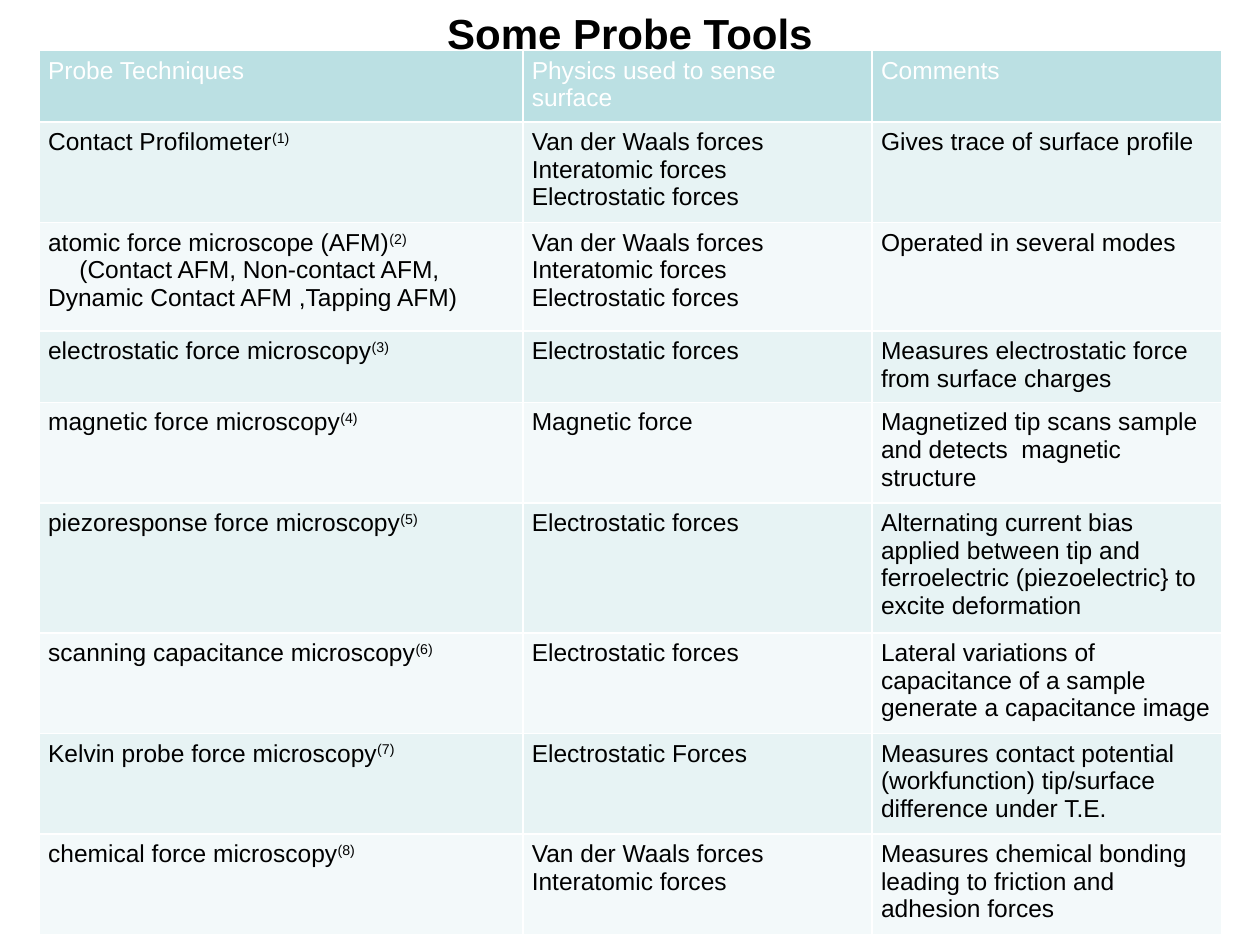
from pptx import Presentation
from pptx import util as u
from pptx.dml.color import RGBColor
from pptx.enum import text

COLORS = {"header": "BBE0E3", "odd": "E7F3F4", "even": "F3F9FA",
          "white": "FFFFFF", "black": "000000"}


def add_text(p, content, size=14, color="black", bold=False, superscript=False):
    r = p.add_run()
    r.text = content
    r.font.name = "Arial"
    r.font.size = u.Pt(size)
    r.font.bold = bold
    r.font.color.rgb = RGBColor.from_string(COLORS[color])
    if superscript:
        r._r.get_or_add_rPr().set("baseline", "30000")


prs = Presentation()
prs.slide_width, prs.slide_height = u.Cm(25.4), u.Cm(19.05)
s = prs.slides.add_slide(prs.slide_layouts[5])

# Title
sp = s.shapes.title
sp.left, sp.top, sp.width, sp.height = u.Cm(0), u.Cm(0), u.Cm(25.4), u.Cm(1.3)
tf = sp.text_frame
tf.auto_size = text.MSO_AUTO_SIZE.NONE
tf.vertical_anchor = text.MSO_ANCHOR.MIDDLE
p = tf.paragraphs[0]
p.alignment = text.PP_ALIGN.CENTER
add_text(p, "Some Probe Tools", size=24, bold=True)

# Table content: technique, physics, comment; each line is a paragraph
headers = ("Probe Techniques", "Physics used to sense surface", "Comments")
all_forces = "Van der Waals forces\nInteratomic forces\nElectrostatic forces"
tools = [
    ("Contact Profilometer", all_forces, "Gives trace of surface profile"),
    ("atomic force microscope (AFM)", all_forces, "Operated in several modes"),
    ("electrostatic force microscopy", "Electrostatic forces",
     "Measures electrostatic force from surface charges"),
    ("magnetic force microscopy", "Magnetic force",
     "Magnetized tip scans sample and detects  magnetic structure"),
    ("piezoresponse force microscopy", "Electrostatic forces",
     "Alternating current bias applied between tip and ferroelectric "
     "(piezoelectric} to excite deformation"),
    ("scanning capacitance microscopy", "Electrostatic forces",
     "Lateral variations of capacitance of a sample generate a capacitance image"),
    ("Kelvin probe force microscopy", "Electrostatic Forces",
     "Measures contact potential (workfunction) tip/surface difference under T.E."),
    ("chemical force microscopy", "Van der Waals forces\nInteratomic forces",
     "Measures chemical bonding leading to friction and adhesion forces"),
]
afm_modes = "(Contact AFM, Non-contact AFM, Dynamic Contact AFM ,Tapping AFM)"

# Table grid
widths = (9.75, 7.04, 7.04)
heights = (1.44, 2.03, 2.18, 1.44, 2.03, 2.62, 2.03, 2.03, 2.03)
table = s.shapes.add_table(len(heights), len(widths), u.Cm(0.79), u.Cm(1.02),
                           u.Cm(sum(widths)), u.Cm(sum(heights))).table
for column, width in zip(table.columns, widths):
    column.width = u.Cm(width)
for row, height in zip(table.rows, heights):
    row.height = u.Cm(height)

# Cells
for i, row in enumerate([headers] + tools):
    fill = "header" if i == 0 else "odd" if i % 2 else "even"
    for j, content in enumerate(row):
        cell = table.cell(i, j)
        cell.margin_left = cell.margin_right = u.Cm(0.18)
        cell.margin_top = cell.margin_bottom = u.Cm(0.13)
        cell.fill.solid()
        cell.fill.fore_color.rgb = RGBColor.from_string(COLORS[fill])
        tf = cell.text_frame
        for k, line in enumerate(content.split("\n")):
            p = tf.add_paragraph() if k else tf.paragraphs[0]
            add_text(p, line, color="black" if i else "white")
        if i and j == 0:
            add_text(p, f"({i})", superscript=True)

# AFM modes, with an indented first line
p = table.cell(2, 0).text_frame.add_paragraph()
p._p.get_or_add_pPr().set("indent", str(u.Cm(0.63)))
add_text(p, afm_modes)

prs.save("out.pptx")
